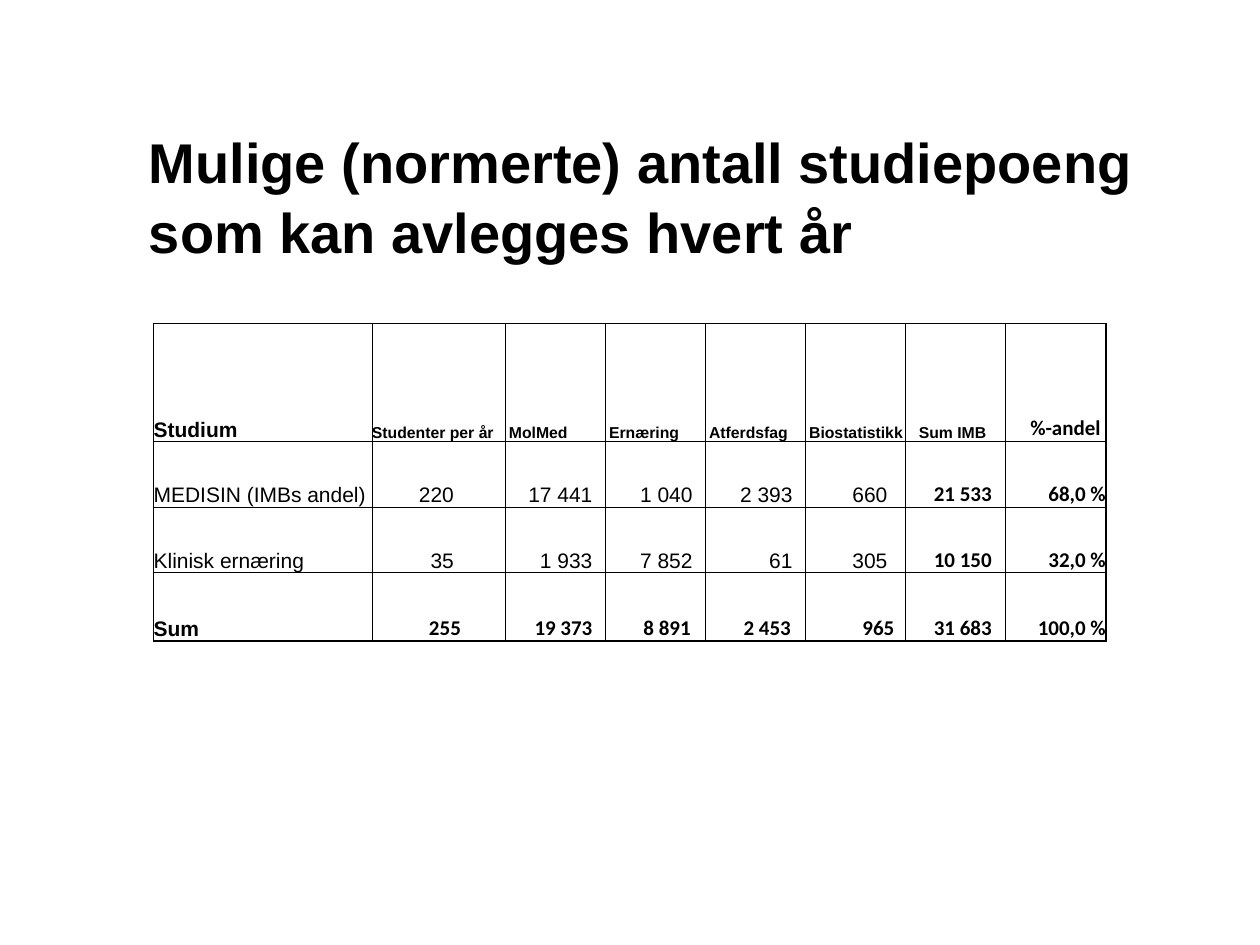
from dataclasses import dataclass

from lxml import etree
from pptx import Presentation
from pptx.dml.color import RGBColor
from pptx.enum.text import MSO_ANCHOR, PP_ALIGN
from pptx.oxml.ns import qn
from pptx.util import Pt

LEFT, RIGHT = PP_ALIGN.LEFT, PP_ALIGN.RIGHT
MIDDLE, BOTTOM = MSO_ANCHOR.MIDDLE, MSO_ANCHOR.BOTTOM


@dataclass(frozen=True)
class Theme:
    ink: str = "000000"
    sans: str = "Arial"
    figures: str = "Calibri"
    title: int = 32
    body: int = 12
    small: int = 9
    thin: float = 0.5
    thick: float = 1


class SlideBuilder:
    def __init__(self, prs, theme):
        self.theme = theme
        self.slide = prs.slides.add_slide(prs.slide_layouts[6])

    def add_text(self, tf, text, size, font, bold, align=LEFT):
        p = tf.paragraphs[0]
        p.alignment = align
        r = p.add_run()
        r.text = text
        for name, value in {"size": Pt(size), "name": font, "bold": bold}.items():
            setattr(r.font, name, value)
        r.font.color.rgb = RGBColor.from_string(self.theme.ink)
        return p

    def title(self, text, x, y, w, h):
        tf = self.slide.shapes.add_textbox(Pt(x), Pt(y), Pt(w), Pt(h)).text_frame
        tf.word_wrap = True
        tf.vertical_anchor = MIDDLE
        p = self.add_text(tf, text, self.theme.title, self.theme.sans, True)
        p.line_spacing = 1.05

    def table(self, x, y, widths, heights):
        frame = self.slide.shapes.add_table(
            len(heights), len(widths), Pt(x), Pt(y), Pt(sum(widths)), Pt(sum(heights)))
        table = frame.table
        table.first_row = table.horz_banding = False
        for column, width in zip(table.columns, widths):
            column.width = Pt(width)
        for row, height in zip(table.rows, heights):
            row.height = Pt(height)
        return table

    def borders(self, cell, edges):
        """Draw each side with the width that edges gives, in L, R, T, B order."""
        tcPr = cell._tc.get_or_add_tcPr()
        for side, width in edges.items():
            ln = etree.SubElement(tcPr, qn(f"a:ln{side}"), w=str(Pt(width)))
            fill = etree.SubElement(ln, qn("a:solidFill"))
            etree.SubElement(fill, qn("a:srgbClr"), val=self.theme.ink)

    def cell(self, cell, text, edges, size, font, bold, align=LEFT, inset=0):
        """Fill a cell; inset is the gap on the side the text is aligned to."""
        self.borders(cell, edges)
        cell.fill.background()
        margins = {"margin_left": 0, "margin_right": 0, "margin_top": 0, "margin_bottom": 0}
        margins["margin_left" if align == LEFT else "margin_right"] = Pt(inset)
        for name, value in margins.items():
            setattr(cell, name, value)
        cell.vertical_anchor = BOTTOM
        self.add_text(cell.text_frame, text, size, font, bold, align)


HEADERS = ["Studium", "Studenter per år", "MolMed", "Ernæring", "Atferdsfag",
           "Biostatistikk", "Sum IMB", "%-andel"]
STUDIES = [
    ["MEDISIN (IMBs andel)", "220", "17 441", "1 040", "2 393", "660", "21 533", "68,0 %"],
    ["Klinisk ernæring", "35", "1 933", "7 852", "61", "305", "10 150", "32,0 %"],
    ["Sum", "255", "19 373", "8 891", "2 453", "965", "31 683", "100,0 %"],
]
HEADER_INSETS = [0, 0, 2, 2, 2, 2, 7.5, 3]
STUDY_INSETS = [0, 29.5, 7.5, 7.5, 7.5, 10.5, 8, 0]
SUM_INSETS = [0, 25.5, 7.5, 8.5, 8.5, 6.5, 8, 0]
WIDTHS = [124.8, 76.3] + [57.2] * 6
HEIGHTS = [67.5, 37.5, 37.5, 39]


def main():
    prs = Presentation()
    prs.slide_width, prs.slide_height = Pt(720), Pt(540)
    theme = Theme()
    s = SlideBuilder(prs, theme)
    s.title("Mulige (normerte) antall studiepoeng som kan avlegges hvert år",
            78, 66, 606, 90)

    table = s.table(87.8, 184.8, WIDTHS, HEIGHTS)
    last_row, last_col = len(STUDIES), len(HEADERS) - 1
    insets = [HEADER_INSETS, STUDY_INSETS, STUDY_INSETS, SUM_INSETS]
    for i, row in enumerate([HEADERS] + STUDIES):
        for j, text in enumerate(row):
            is_header, is_sum = i == 0, i == last_row
            is_total = j >= last_col - 1
            edges = {
                "L": theme.thick if j == 0 else theme.thin,
                "R": theme.thick if j == last_col else theme.thin,
                "T": theme.thin,
                "B": theme.thick if is_sum else theme.thin,
            }
            if is_header:
                font = theme.figures if j == last_col else theme.sans
                size = theme.small if 0 < j < last_col else theme.body
                align = RIGHT if j == last_col else LEFT
            else:
                font = theme.figures if j and (is_sum or is_total) else theme.sans
                size = theme.body
                align = RIGHT if j else LEFT
            bold = is_header or is_sum or is_total
            s.cell(table.cell(i, j), text, edges, size, font, bold, align, insets[i][j])
    prs.save("out.pptx")


if __name__ == "__main__":
    main()
